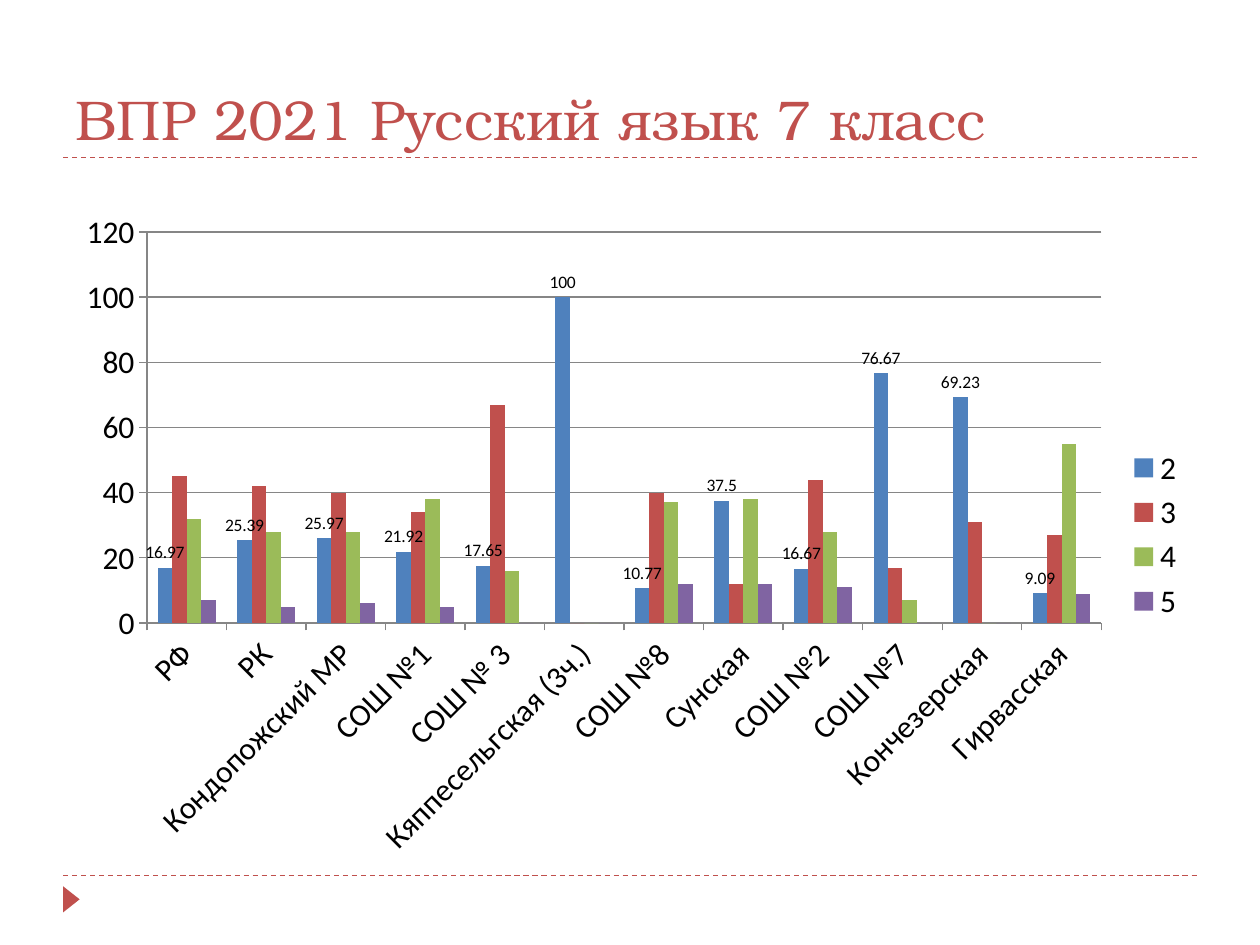
from lxml.etree import SubElement
from pptx import Presentation
from pptx.chart.data import CategoryChartData
from pptx.dml.color import RGBColor
from pptx.enum.chart import (XL_CHART_TYPE, XL_LABEL_POSITION,
                             XL_LEGEND_POSITION, XL_TICK_MARK)
from pptx.enum.dml import MSO_LINE
from pptx.enum.shapes import MSO_CONNECTOR, MSO_SHAPE
from pptx.enum.text import MSO_ANCHOR
from pptx.oxml.ns import qn
from pptx.util import Pt

COLORS = {"accent": "C0504D", "text": "000000", "grid": "868686",
          "2": "4F81BD", "3": "C0504D", "4": "9BBB59", "5": "8064A2"}

SCHOOLS = ["РФ", "РК", "Кондопожский МР", "СОШ №1", "СОШ № 3",
           "Кяппесельгская (3ч.)", "СОШ №8", "Сунская", "СОШ №2",
           "СОШ №7", "Кончезерская", "Гирвасская"]
# Share of pupils (%) by mark
MARKS = {
    "2": [16.97, 25.39, 25.97, 21.92, 17.65, 100,
          10.77, 37.5, 16.67, 76.67, 69.23, 9.09],
    "3": [45, 42, 40, 34, 67, 0, 40, 12, 44, 17, 31, 27],
    "4": [32, 28, 28, 38, 16, 0, 37, 38, 28, 7, 0, 55],
    "5": [7, 5, 6, 5, 0, 0, 12, 12, 11, 0, 0, 9],
}


def color(name):
    return RGBColor.from_string(COLORS[name])


def add_rule(slide, left, top, width):
    """Dashed horizontal rule."""
    rule = slide.shapes.add_connector(
        MSO_CONNECTOR.STRAIGHT, Pt(left), Pt(top), Pt(left + width), Pt(top))
    rule.line.color.rgb = color("accent")
    rule.line.width = Pt(0.75)
    rule.line.dash_style = MSO_LINE.DASH
    SubElement(rule._element.spPr, qn("a:effectLst"))


def add_title(slide, left, top, width, height):
    """Title standing on a rule."""
    box = slide.shapes.add_textbox(Pt(left), Pt(top), Pt(width), Pt(height))
    frame = box.text_frame
    frame.word_wrap = True
    frame.vertical_anchor = MSO_ANCHOR.BOTTOM
    frame.text = "ВПР 2021 Русский язык 7 класс"
    font = frame.paragraphs[0].runs[0].font
    font.name = "TeX Gyre Bonum"
    font.size = Pt(32)
    font.color.rgb = color("accent")
    add_rule(slide, left, top + height, width)


def add_footer(slide, left, top, width):
    """Rule with a small marker pointing right below its left end."""
    add_rule(slide, left, top, width)
    long, short = 15, 9.5
    # The box is turned about its centre, so it is offset by half the difference
    shift = (long - short) / 2
    mark = slide.shapes.add_shape(
        MSO_SHAPE.ISOSCELES_TRIANGLE, Pt(left - shift), Pt(top + 6 + shift),
        Pt(long), Pt(short))
    mark.rotation = 90
    mark.shadow.inherit = False
    mark.fill.solid()
    mark.fill.fore_color.rgb = color("accent")
    mark.line.fill.background()


def style_axis(axis):
    axis.major_tick_mark = XL_TICK_MARK.OUTSIDE
    axis.minor_tick_mark = XL_TICK_MARK.NONE
    axis.format.line.color.rgb = color("grid")
    axis.format.line.width = Pt(0.75)
    axis.tick_labels.font.size = Pt(18)


def add_columns(slide, left, top, width, height):
    """Clustered columns: one series for each mark."""
    data = CategoryChartData()
    data.categories = SCHOOLS
    for mark, shares in MARKS.items():
        data.add_series(mark, shares)
    chart = slide.shapes.add_chart(
        XL_CHART_TYPE.COLUMN_CLUSTERED, Pt(left), Pt(top), Pt(width),
        Pt(height), data).chart
    chart.has_title = False
    chart.font.name = "Calibri"
    chart.font.size = Pt(18)
    chart.font.color.rgb = color("text")

    # Legend
    chart.has_legend = True
    chart.legend.position = XL_LEGEND_POSITION.RIGHT
    chart.legend.include_in_layout = False

    # Axes
    style_axis(chart.category_axis)
    style_axis(chart.value_axis)
    chart.category_axis._element.txPr.find(qn("a:bodyPr")).set("rot", "-2700000")
    chart.value_axis.minimum_scale = 0
    chart.value_axis.maximum_scale = 120
    chart.value_axis.major_unit = 20
    grid = chart.value_axis.major_gridlines.format.line
    grid.color.rgb = color("grid")
    grid.width = Pt(0.75)

    # Columns
    plot = chart.plots[0]
    plot.gap_width = 150
    plot.overlap = 0
    plot.vary_by_categories = False
    for series in plot.series:
        series.format.fill.solid()
        series.format.fill.fore_color.rgb = color(series.name)
        series.invert_if_negative = False

    # Values above the lowest mark only
    labels = plot.series[0].data_labels
    labels.show_value = True
    labels.position = XL_LABEL_POSITION.OUTSIDE_END
    labels.font.size = Pt(10)
    labels.font.color.rgb = color("text")


def main():
    deck = Presentation()
    deck.slide_width, deck.slide_height = Pt(720), Pt(540)
    slide = deck.slides.add_slide(deck.slide_layouts[6])
    add_footer(slide, 36, 500.4, 648)
    add_title(slide, 36, 12, 648, 78)
    add_columns(slide, 36.5, 114, 647.5, 383)
    deck.save("out.pptx")


if __name__ == "__main__":
    main()
